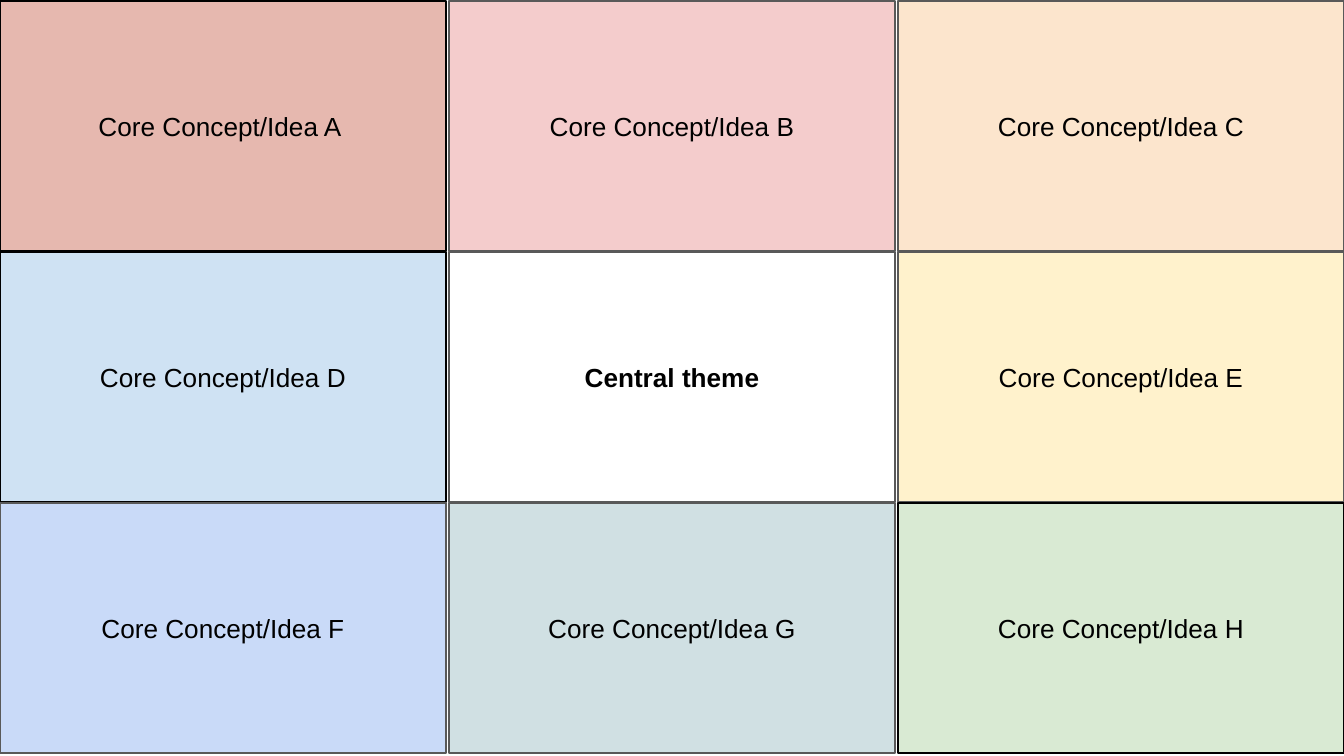
from dataclasses import dataclass

import pptx
import pptx.dml.color
import pptx.enum.shapes
import pptx.enum.text
import pptx.slide
import pptx.util

EMU_PER_PX = 914400 / 134.4
SLIDE_WIDTH, SLIDE_HEIGHT = 1344, 756

# Grid, in px
COLUMNS = 3
GRID_LEFT, GRID_TOP = 0, 1
CELL_WIDTH, CELL_HEIGHT = 446, 250
COLUMN_STEP, ROW_STEP = 449, 251
CELL_MARGIN = 13

COLORS = {
    "black": "000000",
    "gray": "595959",
    "white": "FFFFFF",
    "clay": "E6B8AF",
    "pink": "F4CCCC",
    "peach": "FCE5CD",
    "sky": "CFE2F3",
    "cream": "FFF2CC",
    "periwinkle": "C9DAF8",
    "teal": "D0E0E3",
    "green": "D9EAD3",
}


@dataclass(frozen=True)
class Idea:
    label: str
    fill: str
    border: str = "gray"
    bold: bool = False


# Row by row, from the top left
IDEAS = [
    Idea("Core Concept/Idea A ", "clay", "black"),
    Idea("Core Concept/Idea B", "pink"),
    Idea("Core Concept/Idea C", "peach"),
    Idea("Core Concept/Idea D", "sky", "black"),
    Idea("Central theme", "white", bold=True),
    Idea("Core Concept/Idea E", "cream"),
    Idea("Core Concept/Idea F", "periwinkle"),
    Idea("Core Concept/Idea G", "teal"),
    Idea("Core Concept/Idea H", "green", "black"),
]


def px(length: int) -> pptx.util.Emu:
    return pptx.util.Emu(round(length * EMU_PER_PX))


def color(name: str) -> pptx.dml.color.RGBColor:
    return pptx.dml.color.RGBColor.from_string(COLORS[name])


def draw_idea(slide: pptx.slide.Slide, idea: Idea, row: int, column: int) -> None:
    cell = slide.shapes.add_shape(
        pptx.enum.shapes.MSO_SHAPE.RECTANGLE,
        px(GRID_LEFT + column * COLUMN_STEP),
        px(GRID_TOP + row * ROW_STEP),
        px(CELL_WIDTH),
        px(CELL_HEIGHT),
    )
    cell.shadow.inherit = False
    cell.fill.solid()
    cell.fill.fore_color.rgb = color(idea.fill)
    cell.line.color.rgb = color(idea.border)
    cell.line.width = pptx.util.Pt(1.5)

    # Label
    frame = cell.text_frame
    frame.word_wrap = True
    frame.vertical_anchor = pptx.enum.text.MSO_ANCHOR.MIDDLE
    frame.margin_left = frame.margin_right = px(CELL_MARGIN)
    frame.margin_top = frame.margin_bottom = px(CELL_MARGIN)
    frame.text = idea.label
    label = frame.paragraphs[0]
    label.alignment = pptx.enum.text.PP_ALIGN.CENTER
    font = label.runs[0].font
    font.name = "Arial"
    font.size = pptx.util.Pt(14)
    font.bold = idea.bold
    font.color.rgb = color("black")


def main() -> None:
    deck = pptx.Presentation()
    deck.slide_width = px(SLIDE_WIDTH)
    deck.slide_height = px(SLIDE_HEIGHT)
    slide = deck.slides.add_slide(deck.slide_layouts[6])

    # Eight ideas around the central theme
    for index, idea in enumerate(IDEAS):
        row, column = divmod(index, COLUMNS)
        draw_idea(slide, idea, row, column)

    deck.save("out.pptx")


if __name__ == "__main__":
    main()
